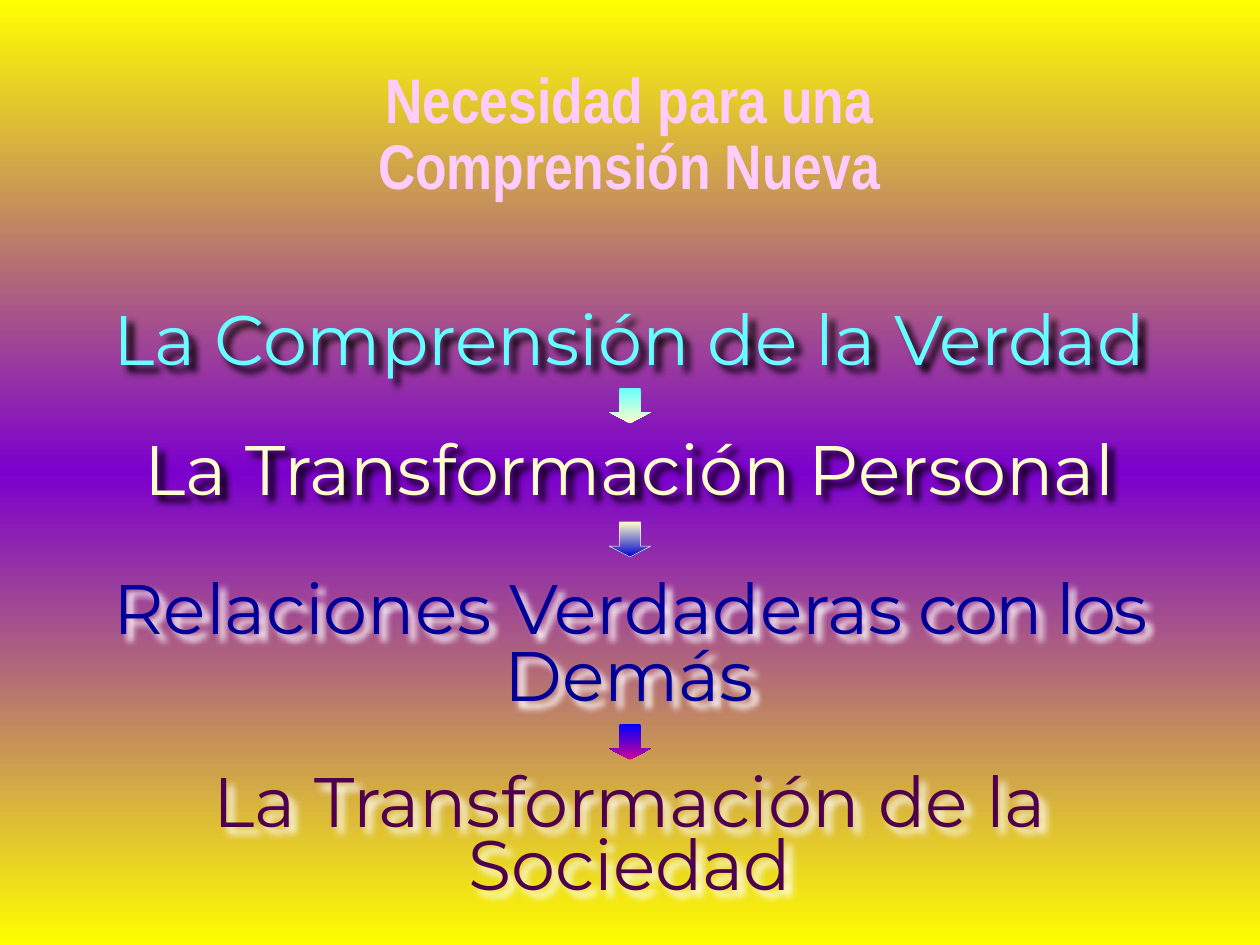
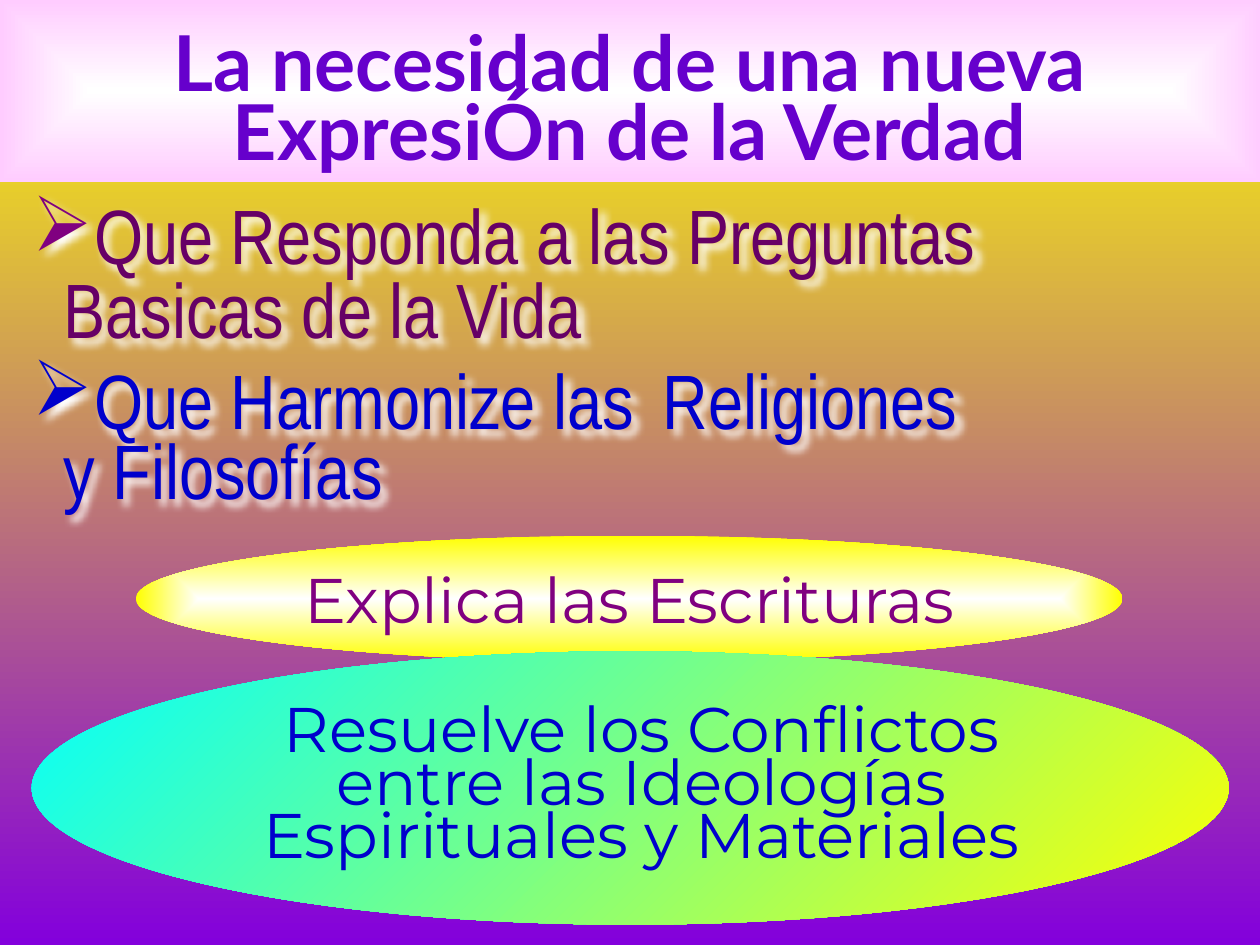
from lxml import etree
from pptx import Presentation
from pptx.dml.color import RGBColor
from pptx.enum.shapes import MSO_SHAPE
from pptx.enum.text import MSO_ANCHOR, MSO_AUTO_SIZE, PP_ALIGN
from pptx.oxml.ns import qn
from pptx.util import Cm, Pt

OVAL, ARROW = MSO_SHAPE.OVAL, MSO_SHAPE.DOWN_ARROW
TOP, MIDDLE = MSO_ANCHOR.TOP, MSO_ANCHOR.MIDDLE
LEFT, CENTER = PP_ALIGN.LEFT, PP_ALIGN.CENTER
GROW, FIXED = MSO_AUTO_SIZE.SHAPE_TO_FIT_TEXT, MSO_AUTO_SIZE.NONE

BLACK = RGBColor(0x00, 0x00, 0x00)
WHITE = RGBColor(0xFF, 0xFF, 0xFF)
YELLOW = RGBColor(0xFF, 0xFF, 0x00)
CREAM = RGBColor(0xFF, 0xFF, 0xCC)
AQUA = RGBColor(0x66, 0xFF, 0xFF)
CYAN = RGBColor(0x00, 0xFF, 0xFF)
NAVY = RGBColor(0x00, 0x00, 0x99)
ROYAL = RGBColor(0x00, 0x00, 0xCC)
BLUE = RGBColor(0x00, 0x00, 0xFF)
PINK = RGBColor(0xFF, 0xCC, 0xFF)
ROSE = RGBColor(0xCC, 0x00, 0x99)
PLUM = RGBColor(0x4E, 0x00, 0x4E)
WINE = RGBColor(0x66, 0x00, 0x66)
PURPLE = RGBColor(0x80, 0x00, 0x80)
GRAPE = RGBColor(0x66, 0x00, 0xCC)
VIOLET = RGBColor(0x7B, 0x00, 0xCE)
INDIGO = RGBColor(0x83, 0x00, 0xDC)

NARROW, SANS, BOLD = "Arial Narrow", "Montserrat", "Lato"


def add(parent, tag, **attrs):
    return etree.SubElement(parent, qn(tag), attrs)


def blend(fill, props, colors, angle=None):
    """Spread colors evenly along angle, or from the centre when it is None."""
    fill.solid()
    grad = etree.Element(qn("a:gradFill"), rotWithShape="1")
    stops = add(grad, "a:gsLst")
    for i, color in enumerate(colors):
        pos = 100000 * i // (len(colors) - 1)
        add(add(stops, "a:gs", pos=str(pos)), "a:srgbClr", val=str(color))
    if angle is None:
        side = dict.fromkeys("ltrb", "50000")
        add(add(grad, "a:path", path="shape"), "a:fillToRect", **side)
    else:
        add(grad, "a:lin", ang=str(angle * 60000), scaled="0")
    props.replace(props.find(qn("a:solidFill")), grad)


def paint(slide, colors):
    blend(slide.background.fill, slide.element.cSld.bg.bgPr, colors, 90)


def shade(shape, color):
    """Cast a soft shadow down and to the right."""
    shape.shadow.inherit = False
    effects = shape.element.spPr.find(qn("a:effectLst"))
    cast = add(effects, "a:outerShdw", blurRad="50800", dist="53900",
               dir="2700000", algn="ctr", rotWithShape="0")
    add(cast, "a:srgbClr", val=str(color))


def write(shape, text, font, size, color, align=CENTER, space=None,
          anchor=TOP, bold=False, fit=GROW):
    frame = shape.text_frame
    frame.text = text
    frame.word_wrap = True
    frame.auto_size = fit
    frame.vertical_anchor = anchor
    for para in frame.paragraphs:
        para.alignment = align
        para.line_spacing = space
        for run in para.runs:
            style(run, font, size, color, bold)


def style(run, font, size, color, bold=False):
    run.font.name = font
    run.font.size = Pt(size)
    run.font.bold = bold
    run.font.color.rgb = color


def place(shape, box):
    shape.left, shape.top, shape.width, shape.height = map(Cm, box)


def label(shapes, box, *args, shadow=None, **kwargs):
    shape = shapes.add_textbox(*map(Cm, box))
    write(shape, *args, **kwargs)
    if shadow is not None:
        shade(shape, shadow)
    return shape


def form(shapes, kind, box, colors, angle=None):
    shape = shapes.add_shape(kind, *map(Cm, box))
    shape.shadow.inherit = False
    shape.line.fill.background()
    blend(shape.fill, shape.element.spPr, colors, angle)
    return shape


def arrow(slide, top, colors):
    shape = form(slide.shapes, ARROW, (12.28, top, 0.84, 0.71), colors, 90)
    shape.adjustments[1] = 0.31
    return shape


def bullet(slide, box, text, color, mark, space):
    shape = label(slide.shapes, box, text, NARROW, 44, color, align=LEFT,
                  space=space, anchor=MIDDLE, shadow=WHITE)
    props = shape.text_frame.paragraphs[0]._p.get_or_add_pPr()
    indent = Cm(0.62)
    props.set("marL", str(indent))
    props.set("indent", str(-indent))
    add(add(props, "a:buClr"), "a:srgbClr", val=str(mark))
    add(props, "a:buChar", char="➢")


def ideas(slide, box):
    """Oval with three centred lines laid over it."""
    left, top, width, height = box
    group = slide.shapes.add_group_shape()
    form(group.shapes, OVAL, box, (CYAN, YELLOW), 45)
    inner = left + 2.69, top + 1.06, width - 4.93, height - 1.9
    label(group.shapes, inner,
          "Resuelve los Conflictos\nentre las Ideologías\n"
          "Espirituales y Materiales", SANS, 36, ROYAL, space=0.7)


def need_slide(slide):
    paint(slide, (YELLOW, VIOLET, YELLOW))
    title = slide.shapes.title
    place(title, (1.47, 1.27, 22.43, 3.81))
    write(title, "Necesidad para una\nComprensión Nueva", NARROW, 36, PINK,
          space=Pt(38), bold=True, fit=FIXED)

    steps = (
        ((0.2, 5.84, 24.97, 1.96), "La Comprensión de la Verdad",
         AQUA, BLACK, None),
        ((0.3, 8.46, 24.77, 1.96), "La Transformación Personal",
         CREAM, BLACK, None),
        ((0.2, 11.58, 24.97, 3.02), "Relaciones Verdaderas",
         NAVY, WHITE, 0.8),
        ((2, 15.54, 21.4, 2.87), "La Transformación de la Sociedad",
         PLUM, WHITE, 0.75),
    )
    labels = [label(slide.shapes, box, text, SANS, 40, color, space=space,
                    shadow=shadow)
              for box, text, color, shadow, space in steps]
    para = labels[2].text_frame.paragraphs[0]
    for text, gap in ((" con los ", "-150"), ("Demás", "0")):
        run = para.add_run()
        run.text = text
        style(run, SANS, 40, NAVY)
        run.font._element.set("spc", gap)

    arrow(slide, 7.82, (AQUA, CREAM))
    middle = arrow(slide, 10.52, (CREAM, ROYAL))
    middle.line.color.rgb = CREAM
    middle.line.width = Pt(0.25)
    arrow(slide, 14.6, (BLUE, ROSE))


def truth_slide(slide):
    paint(slide, (YELLOW, INDIGO))
    title = slide.shapes.title
    place(title, (0, 0, 25.4, 3.66))
    blend(title.fill, title.element.spPr, (WHITE, PINK))
    write(title, "La necesidad de una nueva ExpresiÓn de la Verdad", BOLD, 44,
          GRAPE, space=0.75, anchor=MIDDLE, bold=True, fit=FIXED)
    title.text_frame.margin_top = Cm(0.7)

    oval = form(slide.shapes, OVAL, (2.74, 10.8, 19.89, 2.54),
                (WHITE, YELLOW))
    write(oval, "Explica las Escrituras", SANS, 36, PURPLE, anchor=MIDDLE,
          fit=FIXED)
    oval.text_frame.word_wrap = False

    bullet(slide, (0.41, 4.01, 21.18, 3.23),
           "Que Responda a las Preguntas \tBasicas de la Vida",
           WINE, PURPLE, 0.8)
    bullet(slide, (0.41, 7.42, 19.43, 3.05),
           "Que Harmonize las \tReligiones y Filosofías",
           ROYAL, ROYAL, 0.75)
    ideas(slide, (0.64, 13.13, 24.13, 5.51))


def main():
    deck = Presentation()
    deck.slide_width, deck.slide_height = Cm(25.4), Cm(19.05)
    layout = deck.slide_layouts.get_by_name("Title Only")
    for build in (need_slide, truth_slide):
        build(deck.slides.add_slide(layout))
    deck.save("out.pptx")


if __name__ == "__main__":
    main()
